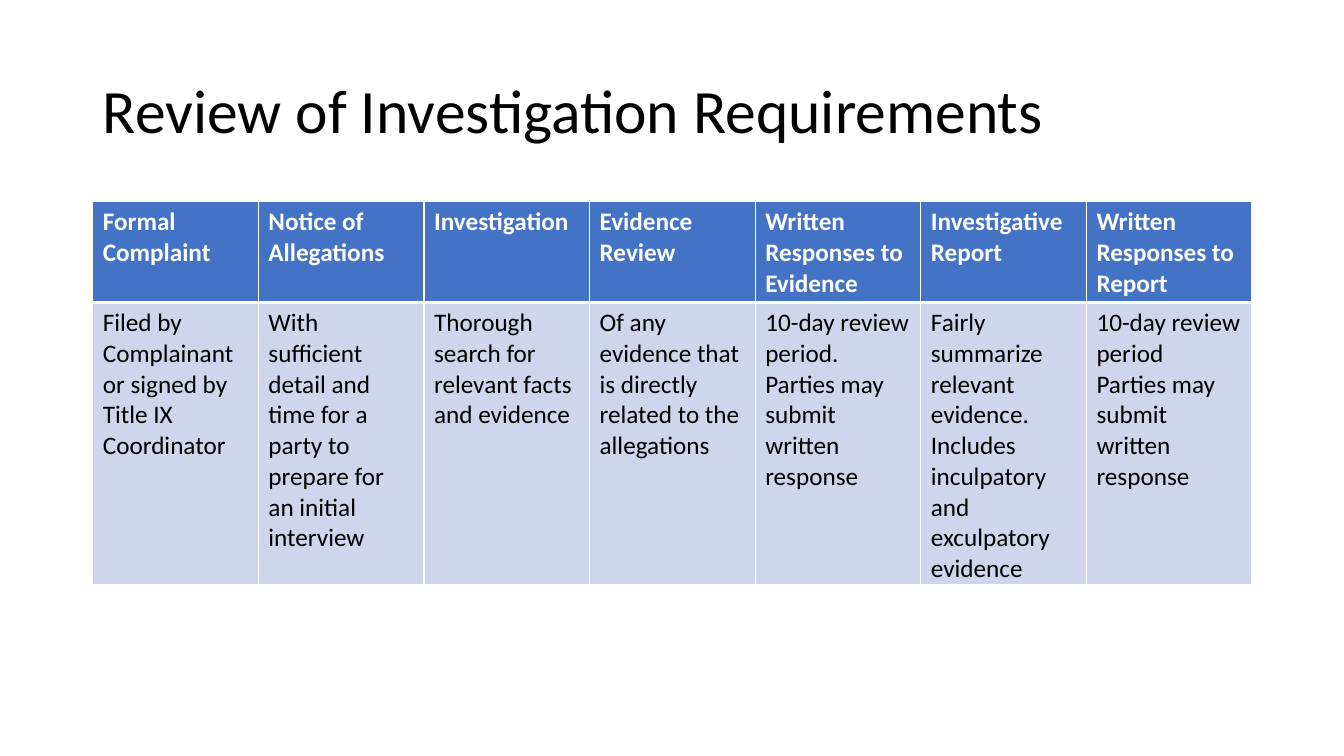
from dataclasses import dataclass

from lxml.etree import SubElement
from pptx import Presentation
from pptx.dml.color import RGBColor
from pptx.enum.text import MSO_ANCHOR
from pptx.oxml.ns import qn
from pptx.util import Inches, Pt


@dataclass(frozen=True)
class Theme:
    font: str = "Calibri"
    title_size: int = 44
    table_size: int = 18
    ink: str = "000000"
    paper: str = "FFFFFF"
    header_fill: str = "4472C4"
    body_fill: str = "CFD5EA"
    thin_rule: int = 1
    header_rule: int = 3


STEPS = [
    ("Formal Complaint",
     "Filed by Complainant or signed by Title IX Coordinator"),
    ("Notice of Allegations",
     "With sufficient detail and time for a party to prepare for an initial interview"),
    ("Investigation",
     "Thorough search for relevant facts and evidence"),
    ("Evidence Review",
     "Of any evidence that is directly related to the allegations"),
    ("Written Responses to Evidence",
     "10-day review period. Parties may submit written response"),
    ("Investigative Report",
     "Fairly summarize relevant evidence.\n"
     "Includes inculpatory and exculpatory evidence"),
    ("Written Responses to Report",
     "10-day review period\nParties may submit written response"),
]


class SlideBuilder:
    def __init__(self, slide, theme):
        self.slide = slide
        self.theme = theme

    def style_text(self, text_frame, size, color, bold=False):
        for paragraph in text_frame.paragraphs:
            for run in paragraph.runs:
                run.font.name = self.theme.font
                run.font.size = Pt(size)
                run.font.bold = bold
                run.font.color.rgb = RGBColor.from_string(color)

    def title(self, wording, left, top, width, height):
        box = self.slide.shapes.add_textbox(
            Inches(left), Inches(top), Inches(width), Inches(height))
        heading = box.text_frame
        heading.word_wrap = True
        heading.vertical_anchor = MSO_ANCHOR.MIDDLE
        heading.text = wording
        heading.paragraphs[0].line_spacing = 0.9
        self.style_text(heading, self.theme.title_size, self.theme.ink)

    def cell_borders(self, cell, top, bottom):
        """Rule all four sides; call before filling, since borders precede the fill in XML."""
        properties = cell._tc.get_or_add_tcPr()
        thin = self.theme.thin_rule
        for side, weight in (("L", thin), ("R", thin), ("T", top), ("B", bottom)):
            line = SubElement(properties, qn(f"a:ln{side}"), w=str(Pt(weight)))
            solid = SubElement(line, qn("a:solidFill"))
            SubElement(solid, qn("a:srgbClr"), val=self.theme.paper)

    def table(self, steps, left, top, width, row_heights):
        theme = self.theme
        steps_table = self.slide.shapes.add_table(
            len(row_heights), len(steps), Inches(left), Inches(top),
            Inches(width), Inches(sum(row_heights))).table
        for row, height in zip(steps_table.rows, row_heights):
            row.height = Inches(height)
        row_styles = [
            (theme.header_fill, theme.paper, True, theme.thin_rule, theme.header_rule),
            (theme.body_fill, theme.ink, False, theme.header_rule, theme.thin_rule),
        ]
        for column, step in enumerate(steps):
            for row, (wording, style) in enumerate(zip(step, row_styles)):
                fill, color, bold, top_rule, bottom_rule = style
                cell = steps_table.cell(row, column)
                cell.text_frame.text = wording
                self.style_text(cell.text_frame, theme.table_size, color, bold)
                self.cell_borders(cell, top_rule, bottom_rule)
                cell.fill.solid()
                cell.fill.fore_color.rgb = RGBColor.from_string(fill)


def main():
    presentation = Presentation()
    presentation.slide_width = Inches(13.33)
    presentation.slide_height = Inches(7.5)
    slide = presentation.slides.add_slide(presentation.slide_layouts[6])
    builder = SlideBuilder(slide, Theme())
    builder.title("Review of Investigation Requirements", 0.92, 0.4, 11.5, 1.45)
    builder.table(STEPS, 0.92, 2, 11.5, row_heights=(1, 2.8))
    presentation.save("out.pptx")


if __name__ == "__main__":
    main()
